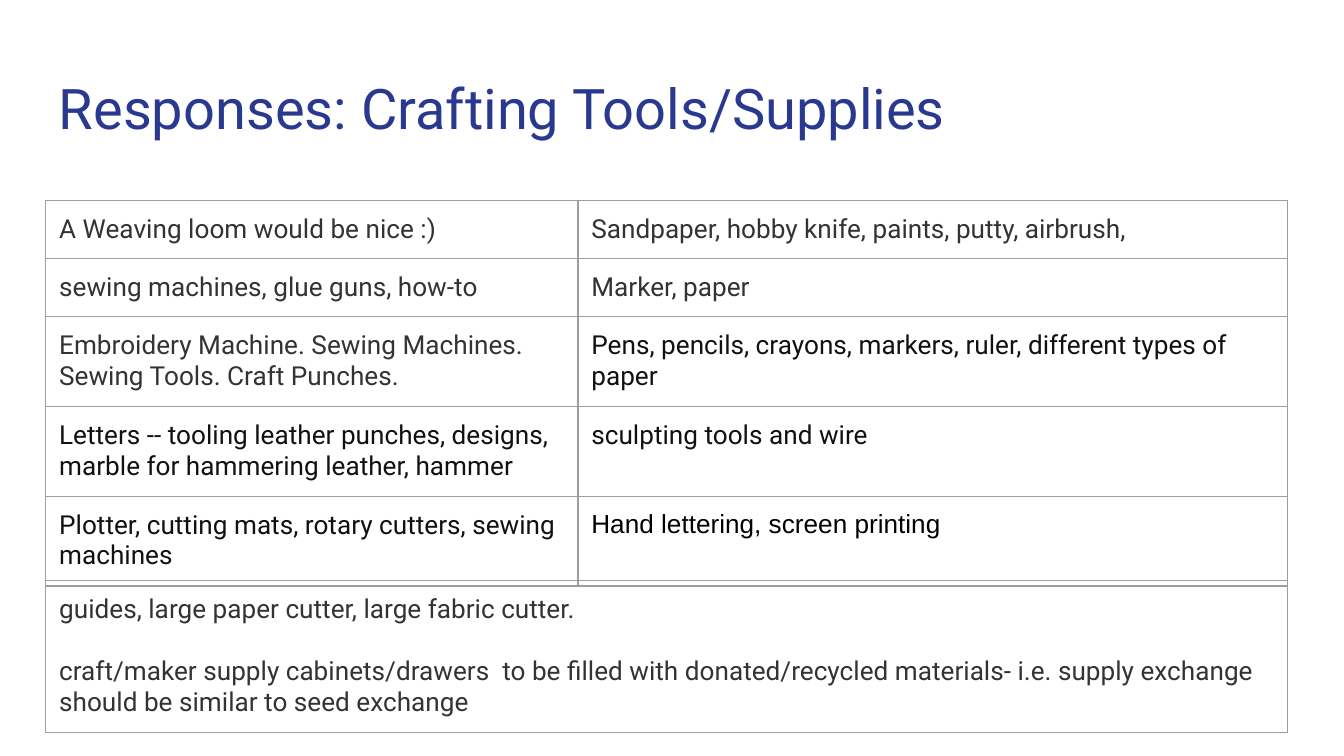
from dataclasses import dataclass

import pptx
import pptx.dml.color
import pptx.enum.text
import pptx.oxml
import pptx.oxml.ns
import pptx.util

RGBColor = pptx.dml.color.RGBColor
INDIGO = RGBColor(0x2A, 0x39, 0x90)
GRAPHITE = RGBColor(0x33, 0x33, 0x33)
INK = RGBColor(0x11, 0x11, 0x11)
BLACK = RGBColor(0x00, 0x00, 0x00)
BORDER = RGBColor(0x9E, 0x9E, 0x9E)

SLIDE_WIDTH = 10
SLIDE_HEIGHT = SLIDE_WIDTH * 9 / 16
LEFT = 0.34
TITLE_TOP, TITLE_HEIGHT = 0.08 * SLIDE_HEIGHT, 0.66
TABLE_WIDTH = 9.24
COLUMN_SHARES = (3 / 7, 4 / 7)
TABLE_TOP, LONG_TABLE_TOP = 1.49, 4.32
ROW_HEIGHT = 0.42  # minimum: rows grow with their text
BORDER_POINTS = 0.75
INSET = 0.1
BLANK_LINE_POINTS = 16.5


@dataclass(frozen=True)
class Response:
    paragraphs: tuple[str, ...]
    color: RGBColor = GRAPHITE
    font: str = "Roboto"
    size: int = 14


TITLE = Response(("Responses: Crafting Tools/Supplies",), INDIGO, size=30)

RESPONSES = [
    [Response(("A Weaving loom would be nice :)",)),
     Response(("Sandpaper, hobby knife, paints, putty, airbrush,",))],
    [Response(("sewing machines, glue guns, how-to",)),
     Response(("Marker, paper",))],
    [Response(("Embroidery Machine. Sewing Machines. Sewing Tools. Craft Punches.",)),
     Response(("Pens, pencils, crayons, markers, ruler, different types of paper",), INK)],
    [Response(("Letters -- tooling leather punches, designs, "
               "marble for hammering leather, hammer",), INK),
     Response(("sculpting tools and wire",), INK)],
    [Response(("Plotter, cutting mats, rotary cutters, sewing machines",), INK),
     Response(("Hand lettering, screen printing",), BLACK, "Arial")],
]

LONG_RESPONSE = Response((
    "guides, large paper cutter, large fabric cutter.",
    "craft/maker supply cabinets/drawers  to be filled with donated/recycled "
    "materials- i.e. supply exchange should be similar to seed exchange",
))


def write_response(holder, frame, response: Response) -> None:
    """Fill a frame; holder is the cell or frame that carries the margins."""
    for side in ("left", "right", "top", "bottom"):
        setattr(holder, f"margin_{side}", pptx.util.Inches(INSET))
    frame.word_wrap = True
    for index, text in enumerate(response.paragraphs):
        para = frame.add_paragraph() if index else frame.paragraphs[0]
        para.space_before = pptx.util.Pt(BLANK_LINE_POINTS if index else 0)
        span = para.add_run()
        span.text = text
        font_format = {
            "name": response.font,
            "size": pptx.util.Pt(response.size),
            "bold": False,
        }
        for name, value in font_format.items():
            setattr(span.font, name, value)
        span.font.color.rgb = response.color


def add_borders(cell) -> None:
    properties = cell._tc.get_or_add_tcPr()
    width = pptx.util.Pt(BORDER_POINTS)
    for position, side in enumerate("LRTB"):
        line = pptx.oxml.parse_xml(
            f'<a:ln{side} {pptx.oxml.ns.nsdecls("a")} w="{width}">'
            f'<a:solidFill><a:srgbClr val="{BORDER}"/></a:solidFill></a:ln{side}>'
        )
        properties.insert(position, line)


def add_response_table(page, top: float, column_shares: tuple[float, ...],
                       rows: list[list[Response]]) -> None:
    table = page.shapes.add_table(
        len(rows), len(column_shares),
        *map(pptx.util.Inches, (LEFT, top, TABLE_WIDTH, ROW_HEIGHT * len(rows))),
    ).table
    table.first_row = table.horz_banding = False
    for column, share in zip(table.columns, column_shares):
        column.width = pptx.util.Inches(share * TABLE_WIDTH)
    for row, responses in zip(table.rows, rows):
        row.height = pptx.util.Inches(ROW_HEIGHT)
        for cell, response in zip(row.cells, responses):
            write_response(cell, cell.text_frame, response)
            cell.vertical_anchor = pptx.enum.text.MSO_ANCHOR.TOP
            cell.fill.background()
            add_borders(cell)


def add_title(page) -> None:
    box = page.shapes.add_textbox(*map(pptx.util.Inches, (
        LEFT, TITLE_TOP, SLIDE_WIDTH - 2 * LEFT, TITLE_HEIGHT)))
    write_response(box.text_frame, box.text_frame, TITLE)


def main() -> None:
    deck = pptx.Presentation()
    deck.slide_width = pptx.util.Inches(SLIDE_WIDTH)
    deck.slide_height = pptx.util.Inches(SLIDE_HEIGHT)
    page = deck.slides.add_slide(deck.slide_layouts[6])
    add_title(page)
    add_response_table(page, TABLE_TOP, COLUMN_SHARES, RESPONSES)
    add_response_table(page, LONG_TABLE_TOP, (1,), [[LONG_RESPONSE]])
    deck.save("out.pptx")


if __name__ == "__main__":
    main()
